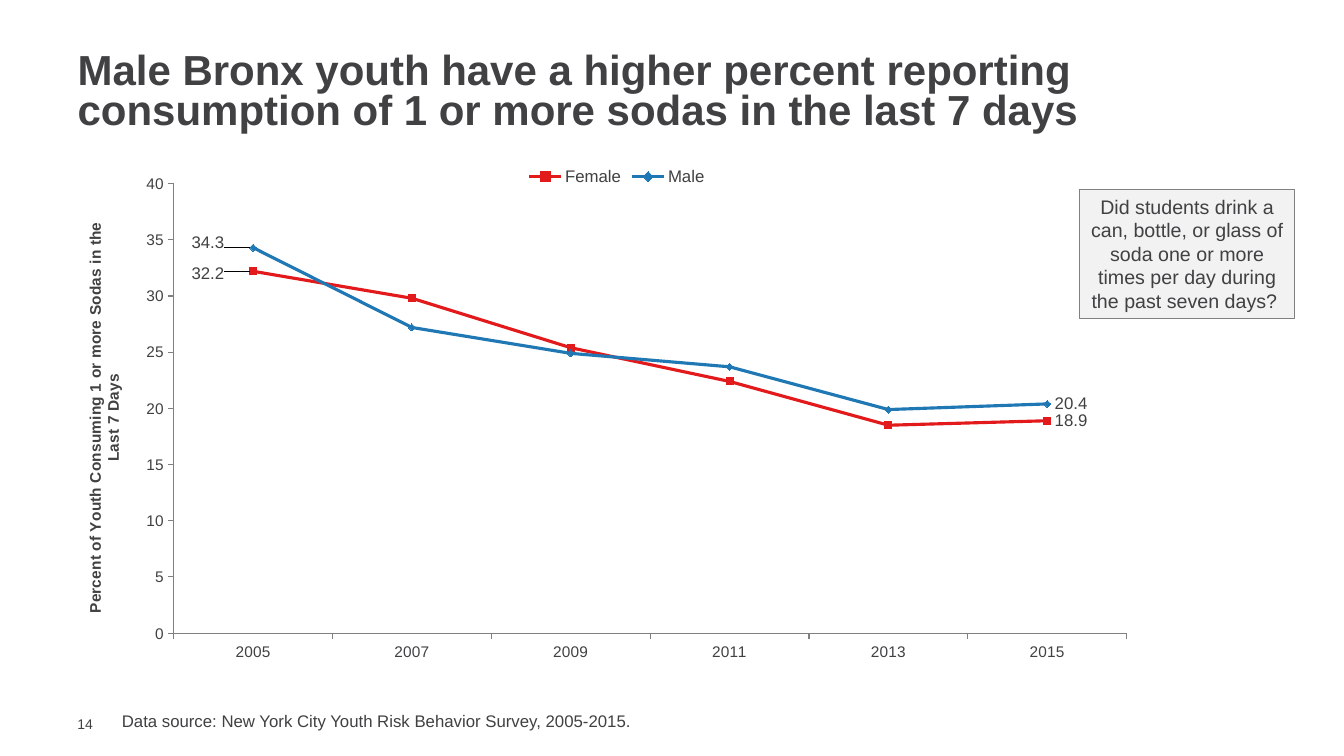
import pptx
import pptx.chart.data
import pptx.dml.color
import pptx.enum.chart
import pptx.enum.shapes
import pptx.enum.text
import pptx.oxml
import pptx.util

Inches, Pt = pptx.util.Inches, pptx.util.Pt
Align, Anchor = pptx.enum.text.PP_ALIGN, pptx.enum.text.MSO_ANCHOR
Mark = pptx.enum.chart.XL_MARKER_STYLE
Side = pptx.enum.chart.XL_LABEL_POSITION
Tick = pptx.enum.chart.XL_TICK_MARK

HEX = {"text": "414042", "box": "F2F2F2", "edge": "808080",
       "Female": "E31A1C", "Male": "1F78B4"}
TITLE = ("Male Bronx youth have a higher percent reporting "
         "consumption of 1 or more sodas in the last 7 days")
ASK = ("Did students drink a can, bottle, or glass of soda one or more "
       "times per day during the past seven days? ")
SOURCE = "Data source: New York City Youth Risk Behavior Survey, 2005-2015."
PAGE = "14"
AXIS = "Percent of Youth Consuming 1 or more Sodas in the Last 7 Days"
YEARS = ["2005", "2007", "2009", "2011", "2013", "2015"]
RATES = {"Female": [32.2, 29.8, 25.4, 22.4, 18.5, 18.9],
         "Male": [34.3, 27.2, 24.9, 23.7, 19.9, 20.4]}
MARKS = {"Female": Mark.SQUARE, "Male": Mark.DIAMOND}
SHIFT = {"Female": (-0.02, 0.004), "Male": (-0.02, -0.01)}  # first label
PLOT = {"x": 0.086, "y": 0.052, "w": 0.89, "h": 0.853}

CHART_NS = 'xmlns:c="http://schemas.openxmlformats.org/drawingml/2006/chart"'
C15_NS = 'xmlns:c15="http://schemas.microsoft.com/office/drawing/2012/chart"'


def color(name):
    return pptx.dml.color.RGBColor.from_string(HEX[name])


def style(font, size, bold=False):
    look = {"name": "Arial", "size": Pt(size), "bold": bold}
    for key, value in look.items():
        setattr(font, key, value)
    font.color.rgb = color("text")


def place(shape, area):
    for key, value in zip(("left", "top", "width", "height"), area):
        setattr(shape, key, Inches(value))


def write(shape, text, size, bold=False, align=Align.LEFT, **frame):
    body = shape.text_frame
    body.word_wrap = True
    for key, value in frame.items():
        setattr(body, key, value)
    para = body.paragraphs[0]
    para.alignment = align
    run = para.add_run()
    run.text = text
    style(run.font, size, bold)
    return para


def layout(inner="", **parts):
    """Make a manual chart layout element."""
    rows = "".join(f'<c:{key} val="{value}"/>' for key, value in parts.items())
    return pptx.oxml.parse_xml(
        f"<c:layout {CHART_NS}><c:manualLayout>{inner}{rows}"
        "</c:manualLayout></c:layout>")


def set_axis(axis):
    axis.has_major_gridlines = False
    axis.major_tick_mark = Tick.OUTSIDE
    axis.minor_tick_mark = Tick.NONE
    axis.format.line.color.rgb = color("edge")
    axis.format.line.width = Pt(0.75)
    style(axis.tick_labels.font, 11)


def set_series(line):
    tint = color(line.name)
    line.smooth = False
    line.format.line.color.rgb = tint
    line.format.line.width = Pt(2.25)
    line.marker.style = MARKS[line.name]
    line.marker.size = 5
    line.marker.format.fill.solid()
    line.marker.format.fill.fore_color.rgb = tint
    line.marker.format.line.color.rgb = tint
    for spot, side in ((0, Side.LEFT), (len(YEARS) - 1, Side.RIGHT)):
        label = line.points[spot].data_label
        style(label.font, 12)
        label.position = side
    labels = line.data_labels
    labels.show_value = False
    first = line._element.find(".//{*}dLbl")
    x, y = SHIFT[line.name]
    first.insert(1, layout(x=x, y=y))
    first.getparent().append(pptx.oxml.parse_xml(
        f"<c:extLst {CHART_NS} {C15_NS}>"
        '<c:ext uri="{CE6537A1-D6FC-4f65-9D91-7224C49458BB}">'
        '<c15:showLeaderLines val="1"/></c:ext></c:extLst>'))


def add_rates(slide):
    data = pptx.chart.data.CategoryChartData(number_format="General")
    data.categories = YEARS
    for name, values in RATES.items():
        data.add_series(name, values)
    area = [Inches(n) for n in (0.81, 1.55, 10.62, 5.23)]
    kind = pptx.enum.chart.XL_CHART_TYPE.LINE_MARKERS
    chart = slide.shapes.add_chart(kind, *area, data).chart
    style(chart.font, 10)
    chart.has_title = False
    chart.has_legend = True
    chart.legend.position = pptx.enum.chart.XL_LEGEND_POSITION.TOP
    chart.legend.include_in_layout = False
    style(chart.legend.font, 12)

    for axis in (chart.category_axis, chart.value_axis):
        set_axis(axis)
    scale = {"minimum_scale": 0, "maximum_scale": 40, "major_unit": 5}
    for key, value in scale.items():
        setattr(chart.value_axis, key, value)
    frame = chart.value_axis.axis_title.text_frame
    run = frame.paragraphs[0].add_run()
    run.text = AXIS
    style(run.font, 11, True)
    turn = frame._txBody.find("{*}bodyPr")
    turn.set("rot", "-5400000")
    turn.set("vert", "horz")

    plot = chart.plots[0]
    plot.vary_by_categories = False
    for line in plot.series:
        set_series(line)
    grid = chart._chartSpace.find(".//{*}plotArea")
    for old in grid.findall("{*}layout"):
        grid.remove(old)
    inner = ('<c:layoutTarget val="inner"/><c:xMode val="edge"/>'
             '<c:yMode val="edge"/>')
    grid.insert(0, layout(inner, **PLOT))


def main():
    deck = pptx.Presentation()
    deck.slide_width, deck.slide_height = Inches(13.33), Inches(7.5)
    slide = deck.slides.add_slide(deck.slide_layouts[5])
    shapes = slide.shapes

    title = shapes.title
    place(title, (0.67, 0.47, 12, 0.91))
    para = write(title, TITLE, 30, True, vertical_anchor=Anchor.MIDDLE,
                 auto_size=pptx.enum.text.MSO_AUTO_SIZE.NONE)
    para.line_spacing = 0.8

    add_rates(slide)

    page = shapes.add_textbox(0, 0, 0, 0)
    place(page, (0.67, 7.1, 0.43, 0.17))
    write(page, PAGE, 10, vertical_anchor=Anchor.MIDDLE,
          margin_right=0, margin_top=0, margin_bottom=0)

    note = shapes.add_textbox(0, 0, 0, 0)
    place(note, (1.11, 7, 9.71, 0.3))
    write(note, SOURCE, 12)

    box = shapes.add_shape(pptx.enum.shapes.MSO_SHAPE.RECTANGLE, 0, 0, 0, 0)
    place(box, (10.71, 1.88, 2.13, 1.28))
    box.shadow.inherit = False
    box.fill.solid()
    box.fill.fore_color.rgb = color("box")
    box.line.color.rgb = color("edge")
    box.line.width = Pt(0.75)
    write(box, ASK, 14, align=Align.CENTER, vertical_anchor=Anchor.TOP)

    deck.save("out.pptx")


if __name__ == "__main__":
    main()
